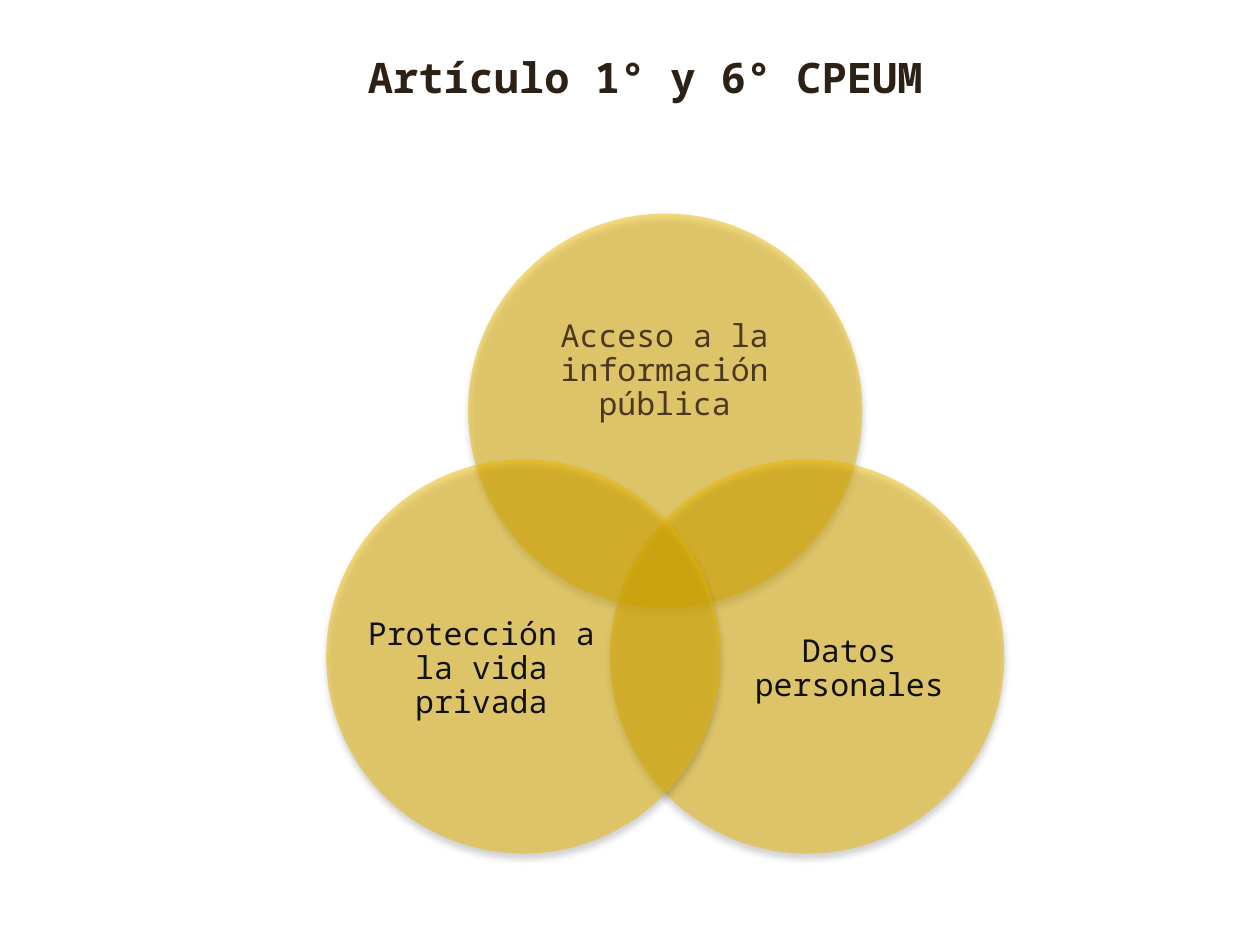
from math import cos, radians, sin

from lxml.etree import SubElement
from pptx import Presentation
from pptx.dml.color import RGBColor
from pptx.enum.shapes import MSO_SHAPE
from pptx.enum.text import MSO_ANCHOR, PP_ALIGN
from pptx.oxml.ns import qn
from pptx.util import Inches, Pt

TITLE = "Artículo 1° y 6° CPEUM"
FONT = "Noto Sans Mono"
GOLD = "EAB800"
# angle on the ring, label, label colour, label box (left, top, width, height)
RIGHTS = [
    (-90, "Acceso a la información pública", "4B3822", (4.13, 2.24, 2.29, 1.41)),
    (30, "Datos personales", "111111", (5.8, 4.45, 1.88, 1.72)),
    (150, "Protección a la vida privada", "111111", (2.88, 4.45, 1.88, 1.72)),
]
CENTER_X, CENTER_Y = 5.28, 4.56
RING_RADIUS = 1.3
DIAMETER = 3.13


def rgb(color):
    return RGBColor.from_string(color)


def write(frame, text, size, color, bold=False):
    """Put one centred paragraph in a text frame."""
    frame.word_wrap = True
    frame.text = text
    para = frame.paragraphs[0]
    para.alignment = PP_ALIGN.CENTER
    font = para.runs[0].font
    font.name, font.size, font.bold = FONT, Pt(size), bold
    font.color.rgb = rgb(color)
    return para


def add_alpha(color_element, percent):
    SubElement(color_element, qn("a:alpha"), val=str(percent * 1000))


def add_soft_shadow(shape):
    shape.shadow.inherit = False
    effects = shape._element.spPr.find(qn("a:effectLst"))
    shadow = SubElement(effects, qn("a:outerShdw"), blurRad=str(Pt(4)),
                        dist=str(Pt(3)), dir="5400000", rotWithShape="0")
    add_alpha(SubElement(shadow, qn("a:srgbClr"), val="000000"), 35)


def add_circle(slide, angle):
    left = CENTER_X + RING_RADIUS * cos(radians(angle)) - DIAMETER / 2
    top = CENTER_Y + RING_RADIUS * sin(radians(angle)) - DIAMETER / 2
    circle = slide.shapes.add_shape(MSO_SHAPE.OVAL, Inches(left), Inches(top),
                                    Inches(DIAMETER), Inches(DIAMETER))
    circle.fill.solid()
    circle.fill.fore_color.rgb = rgb(GOLD)
    add_alpha(circle._element.spPr.find(qn("a:solidFill"))[0], 50)
    circle.line.fill.background()
    add_soft_shadow(circle)


def add_label(slide, text, color, place):
    box = slide.shapes.add_textbox(*map(Inches, place))
    frame = box.text_frame
    frame.margin_left = frame.margin_right = 0
    frame.margin_top = frame.margin_bottom = 0
    frame.vertical_anchor = MSO_ANCHOR.MIDDLE
    write(frame, text, 18, color).line_spacing = 0.9


def main():
    deck = Presentation()
    deck.slide_width, deck.slide_height = Inches(10), Inches(7.5)
    slide = deck.slides.add_slide(deck.slide_layouts[5])

    title = slide.shapes.title
    title.left, title.top = Inches(0.22), Inches(0.36)
    title.width, title.height = Inches(9.8), Inches(0.87)
    title.text_frame.vertical_anchor = MSO_ANCHOR.TOP
    write(title.text_frame, TITLE, 24, "2C2114", bold=True)

    for angle, text, color, place in RIGHTS:
        add_circle(slide, angle)
        add_label(slide, text, color, place)

    deck.save("out.pptx")


if __name__ == "__main__":
    main()
